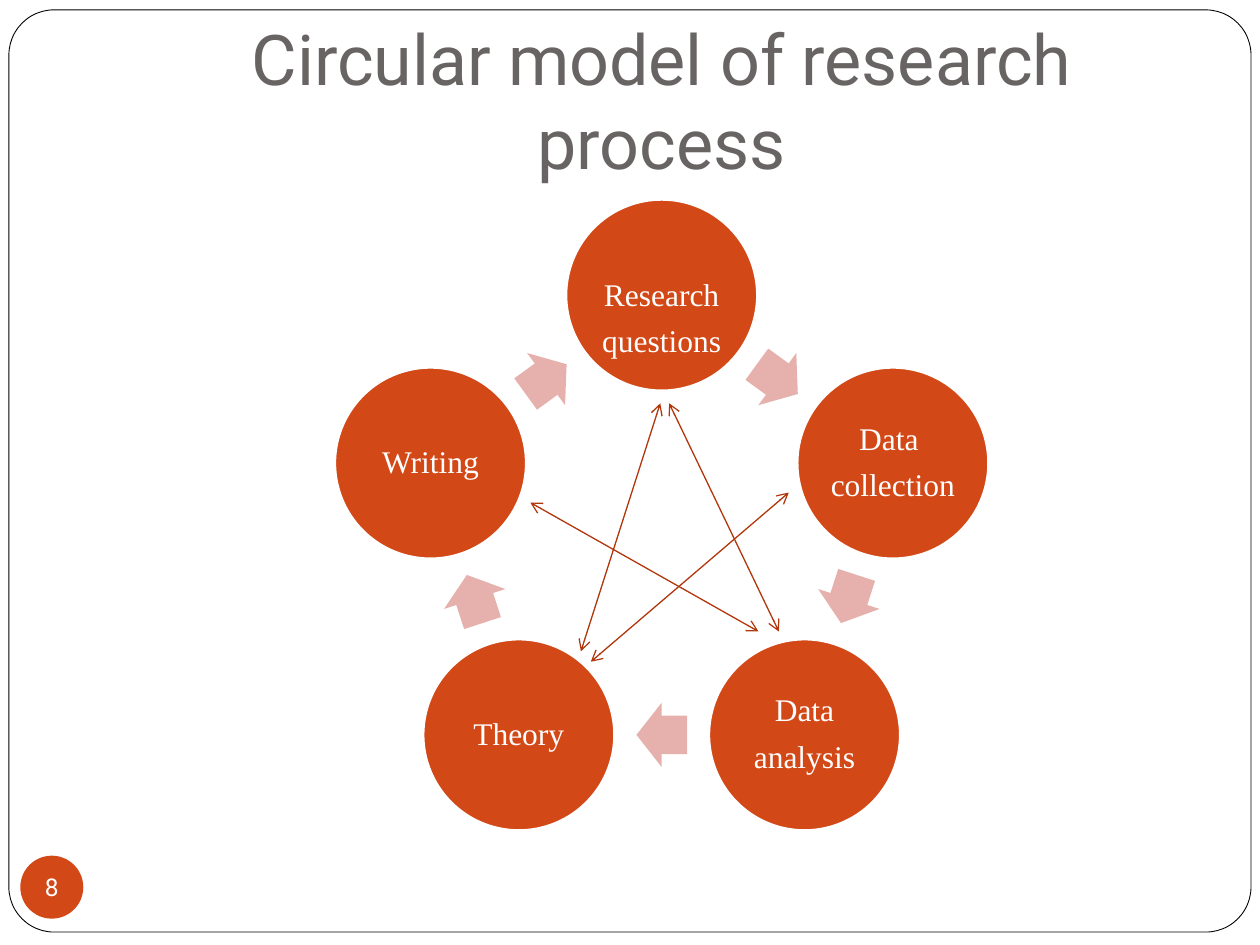
from math import cos, pi, radians, sin

from lxml.etree import SubElement
from pptx import Presentation
from pptx.dml.color import RGBColor
from pptx.enum.shapes import MSO_CONNECTOR, MSO_SHAPE
from pptx.enum.text import MSO_ANCHOR, MSO_AUTO_SIZE, PP_ALIGN
from pptx.oxml.ns import qn
from pptx.util import Cm, Pt

WHITE = RGBColor(0xFF, 0xFF, 0xFF)
BLACK = RGBColor(0, 0, 0)
GREY = RGBColor(0x69, 0x64, 0x64)
ORANGE = RGBColor(0xD3, 0x48, 0x17)
PINK = RGBColor(0xE6, 0xB1, 0xAC)
RUST = RGBColor(0xB1, 0x36, 0x0B)

CENTER_X, CENTER_Y, RING_RADIUS = 13.34, 10.85, 4.9
STAGE_SIZE = 3.84
ARROW_LENGTH, ARROW_WIDTH = 1.02, 1.3
STAGES = [
    ["Research", "questions"],
    ["Data ", "collection"],
    ["Data", "analysis"],
    ["Theory"],
    ["Writing"],
]
LINKS = [
    ((13.49, 8.13), (15.7, 12.73)),
    ((15.9, 9.93), (11.91, 13.34)),
    ((15.29, 12.73), (10.69, 10.13)),
    ((13.31, 8.13), (11.71, 13.13)),
]


def ring_point(angle, radius):
    """Return the point at a clockwise angle from the top of the ring."""
    turn = radians(angle)
    return CENTER_X + radius * sin(turn), CENTER_Y - radius * cos(turn)


def add_plain_shape(page, kind, left, top, width, height, fill=None):
    """Add a shape without shadow or outline."""
    shape = page.shapes.add_shape(kind, Cm(left), Cm(top), Cm(width), Cm(height))
    shape.shadow.inherit = False
    shape.line.fill.background()
    if fill is None:
        shape.fill.background()
    else:
        shape.fill.solid()
        shape.fill.fore_color.rgb = fill
    return shape


def set_outline(shape, color, width):
    """Give a shape a solid outline."""
    shape.line.color.rgb = color
    shape.line.width = Pt(width)


def set_insets(frame, left, top, right, bottom):
    """Set the inner margins of a text frame in centimetres."""
    frame.margin_left, frame.margin_top = Cm(left), Cm(top)
    frame.margin_right, frame.margin_bottom = Cm(right), Cm(bottom)


def write_lines(frame, lines, font_name, size, color):
    """Write centred paragraphs in one font."""
    frame.text = "\n".join(lines)
    for para in frame.paragraphs:
        para.alignment = PP_ALIGN.CENTER
        para.font.name = font_name
        para.font.size = Pt(size)
        para.font.color.rgb = color


def add_title(page):
    """Place and format the title."""
    title = page.shapes.title
    title.left, title.top = Cm(2.54), Cm(0.76)
    title.width, title.height = Cm(21.59), Cm(3.18)
    frame = title.text_frame
    frame.auto_size = MSO_AUTO_SIZE.NONE
    frame.vertical_anchor = MSO_ANCHOR.BOTTOM
    set_insets(frame, 0.25, 0.13, 0.25, 0.25)
    write_lines(frame, ["Circular model of research process"], "Roboto", 40, GREY)


def add_stage(page, angle, lines, top_inset):
    """Add one labelled circle on the ring."""
    x, y = ring_point(angle, RING_RADIUS)
    circle = add_plain_shape(page, MSO_SHAPE.OVAL, x - STAGE_SIZE / 2,
                             y - STAGE_SIZE / 2, STAGE_SIZE, STAGE_SIZE, ORANGE)
    set_outline(circle, WHITE, 1)
    frame = circle.text_frame
    frame.word_wrap = True
    frame.vertical_anchor = MSO_ANCHOR.MIDDLE
    set_insets(frame, 0.08, top_inset, 0.08, 0.08)
    write_lines(frame, lines, "Times New Roman", 18, WHITE)
    for para in frame.paragraphs:
        para.line_spacing = 0.9
        para.space_after = Pt(7)


def add_ring_arrow(page, angle, radius):
    """Add a block arrow that points along the ring."""
    x, y = ring_point(angle, radius)
    arrow = add_plain_shape(page, MSO_SHAPE.RIGHT_ARROW, x - ARROW_LENGTH / 2,
                            y - ARROW_WIDTH / 2, ARROW_LENGTH, ARROW_WIDTH, PINK)
    arrow.adjustments[0] = 0.6
    arrow.adjustments[1] = 0.5
    arrow.rotation = angle


def add_link(page, start, end):
    """Add a thin line with an arrowhead at both ends."""
    ends = [Cm(value) for value in (*start, *end)]
    link = page.shapes.add_connector(MSO_CONNECTOR.STRAIGHT, *ends)
    set_outline(link, RUST, 0.75)
    properties = link.element.spPr
    outline = properties.find(qn("a:ln"))
    for tag in ("a:headEnd", "a:tailEnd"):
        SubElement(outline, qn(tag), type="arrow")
    SubElement(properties, qn("a:effectLst"))


def add_page_number(page, number):
    """Add the round page number badge."""
    badge = add_plain_shape(page, MSO_SHAPE.OVAL, 0.41, 17.25, 1.27, 1.27, ORANGE)
    frame = badge.text_frame
    frame.word_wrap = False
    frame.vertical_anchor = MSO_ANCHOR.MIDDLE
    set_insets(frame, 0, 0, 0, 0)
    write_lines(frame, [number], "Roboto", 14, WHITE)


def main():
    """Build the slide and save it."""
    deck = Presentation()
    deck.slide_width, deck.slide_height = Cm(25.4), Cm(19.05)
    page = deck.slides.add_slide(deck.slide_layouts[5])

    border = add_plain_shape(page, MSO_SHAPE.ROUNDED_RECTANGLE, 0.18, 0.2, 25.04, 18.59)
    border.adjustments[0] = 0.049
    set_outline(border, BLACK, 0.5)
    add_title(page)

    step = 360 / len(STAGES)
    arrow_radius = RING_RADIUS * cos(pi / len(STAGES))
    for index, lines in enumerate(STAGES):
        angle = index * step
        add_stage(page, angle, lines, 1.05 if index == 0 else 0.08)
        add_ring_arrow(page, angle + step / 2, arrow_radius)

    add_page_number(page, "8")
    for start, end in LINKS:
        add_link(page, start, end)
    deck.save("out.pptx")


if __name__ == "__main__":
    main()
